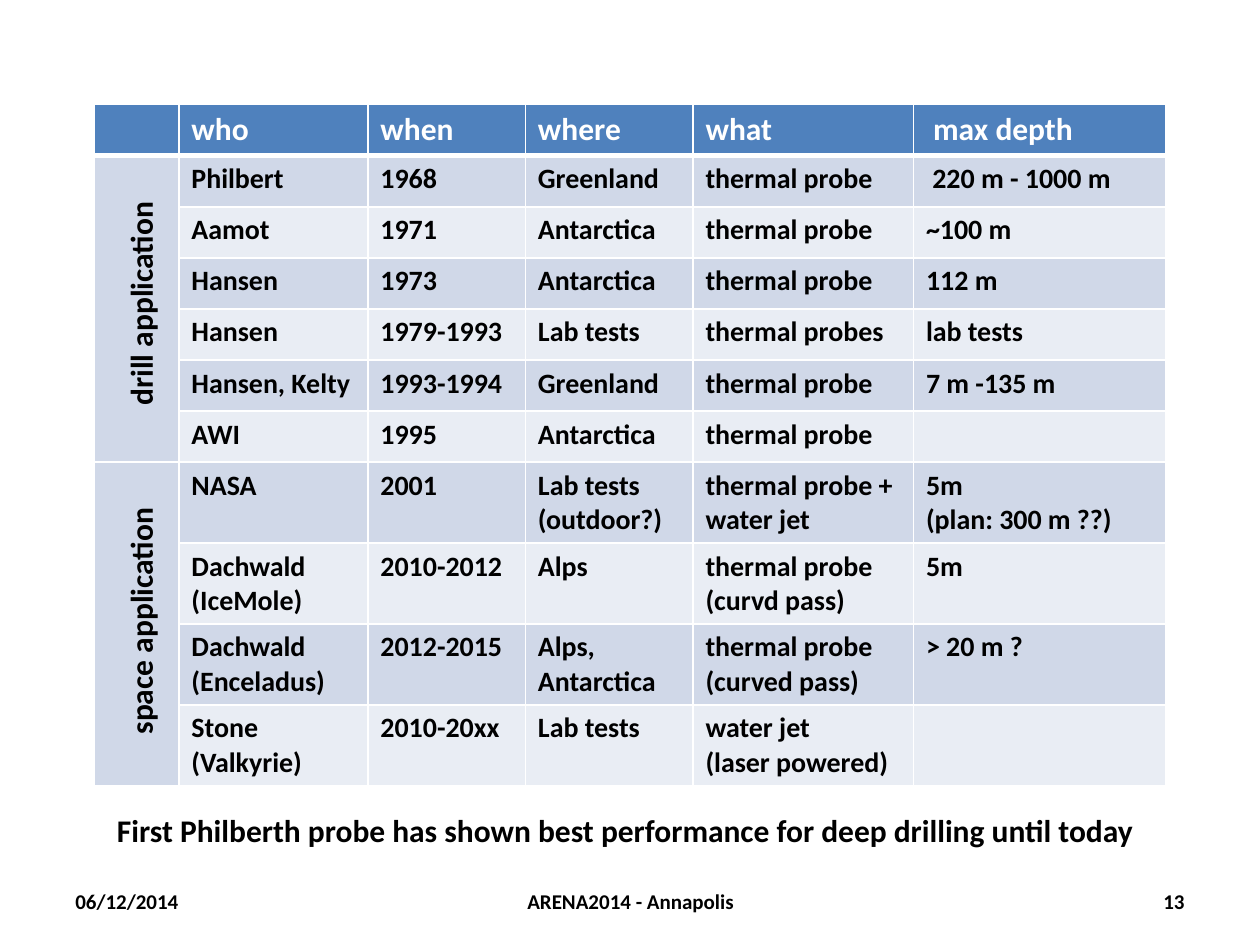
"""Build a slide with a table of ice melting probes."""
from lxml import etree
from pptx import Presentation, util as u
from pptx.dml.color import RGBColor
from pptx.enum import text
from pptx.oxml.ns import qn

FONT, BLACK, WHITE = "Calibri", "000000", "FFFFFF"
HEADER_FILL, BANDS = "4F81BD", ("D0D8E8", "E9EDF4")
HEADER = ["who", "when", "where", "what", " max depth"]
GROUPS = [
    ("drill application", 2.21, [
        ["Philbert", "1968", "Greenland", "thermal probe", " 220 m - 1000 m"],
        ["Aamot", "1971", "Antarctica", "thermal probe", "~100 m"],
        ["Hansen", "1973", "Antarctica", "thermal probe", "112 m"],
        ["Hansen", "1979-1993", "Lab tests", "thermal probes", "lab tests"],
        ["Hansen, Kelty", "1993-1994", "Greenland", "thermal probe", "7 m -135 m"],
        ["AWI", "1995", "Antarctica", "thermal probe", ""],
    ]),
    ("space application", 4.73, [
        ["NASA", "2001", "Lab tests\n(outdoor?)", "thermal probe + water jet",
         "5m\n(plan: 300 m ??)"],
        ["Dachwald (IceMole)", "2010-2012", "Alps", "thermal probe (curvd pass)", "5m"],
        ["Dachwald (Enceladus)", "2012-2015", "Alps,\nAntarctica",
         "thermal probe\n(curved pass)", "> 20 m ?"],
        ["Stone\n(Valkyrie)", "2010-20xx", "Lab tests", "water jet\n(laser powered)", ""],
    ]),
]
COLUMNS = [0.67, 1.5, 1.25, 1.33, 1.75, 2]
GROUP_ROW_CM = [1.03, 1.63]
LEFT, CENTER, RIGHT = text.PP_ALIGN.LEFT, text.PP_ALIGN.CENTER, text.PP_ALIGN.RIGHT
FOOTER = [
    ("06/12/2014", 0.5, 2.33, LEFT),
    ("ARENA2014 - Annapolis", 3.42, 3.17, CENTER),
    ("13", 7.17, 2.33, RIGHT),
]
CONCLUSION = "First Philberth probe has shown best performance for deep drilling until today"


def rgb(value):
    return RGBColor.from_string(value)


def write(tf, words, size, color=BLACK, align=LEFT):
    p = tf.paragraphs[0]
    p.alignment = align
    for i, line in enumerate(words.split("\n") if words else []):
        if i:
            p.add_line_break()
        r = p.add_run()
        r.text = line
        r.font.name, r.font.size, r.font.bold = FONT, u.Pt(size), True
        r.font.color.rgb = rgb(color)


def add_label(s, words, left, top, width, size, align=LEFT, anchor=text.MSO_ANCHOR.TOP):
    sp = s.shapes.add_textbox(*map(u.Inches, (left, top, width, 0.4)))
    sp.text_frame.word_wrap = True
    sp.text_frame.vertical_anchor = anchor
    write(sp.text_frame, words, size, align=align)
    return sp


def style_cell(cell, fill, top=1, bottom=1):
    tc_pr = cell._tc.get_or_add_tcPr()
    for side, width in zip("LRTB", (1, 1, top, bottom)):
        ln = etree.SubElement(tc_pr, qn(f"a:ln{side}"), w=str(u.Pt(width)))
        solid = etree.SubElement(ln, qn("a:solidFill"))
        etree.SubElement(solid, qn("a:srgbClr"), val=WHITE)
    cell.fill.solid()
    cell.fill.fore_color.rgb = rgb(fill)


def add_probe_table(s):
    rows = [HEADER] + [row for group in GROUPS for row in group[2]]
    heights = [GROUP_ROW_CM[0]] + [
        h for h, group in zip(GROUP_ROW_CM, GROUPS) for _ in group[2]]
    frame = s.shapes.add_table(
        len(rows), len(COLUMNS), u.Inches(0.75), u.Inches(0.83),
        u.Inches(sum(COLUMNS)), u.Cm(sum(heights)))
    table = frame.table
    for column, width in zip(table.columns, COLUMNS):
        column.width = u.Inches(width)
    for i, (row, height) in enumerate(zip(rows, heights)):
        table.rows[i].height = u.Cm(height)
        for j, words in enumerate([""] + row):
            cell = table.cell(i, j)
            fill = BANDS[(i - 1) % 2] if i else HEADER_FILL
            style_cell(cell, fill, 3 if i == 1 else 1, 1 if i else 3)
            write(cell.text_frame, words, 16 if i else 18, BLACK if i else WHITE)
    first = 1
    for _, _, members in GROUPS:
        last = first + len(members) - 1
        table.cell(first, 0).merge(table.cell(last, 0))
        first = last + 1


def main():
    prs = Presentation()
    prs.slide_width, prs.slide_height = u.Inches(10), u.Inches(7.5)
    s = prs.slides.add_slide(prs.slide_layouts[6])
    for words, left, width, align in FOOTER:
        add_label(s, words, left, 6.95, width, 12, align, text.MSO_ANCHOR.MIDDLE)
    add_probe_table(s)
    add_label(s, CONCLUSION, 0.83, 6.39, 8.33, 18)
    for words, top, _ in GROUPS:
        add_label(s, words, -0.05, top, 2.33, 18, CENTER).rotation = 270
    prs.save("out.pptx")


if __name__ == "__main__":
    main()
